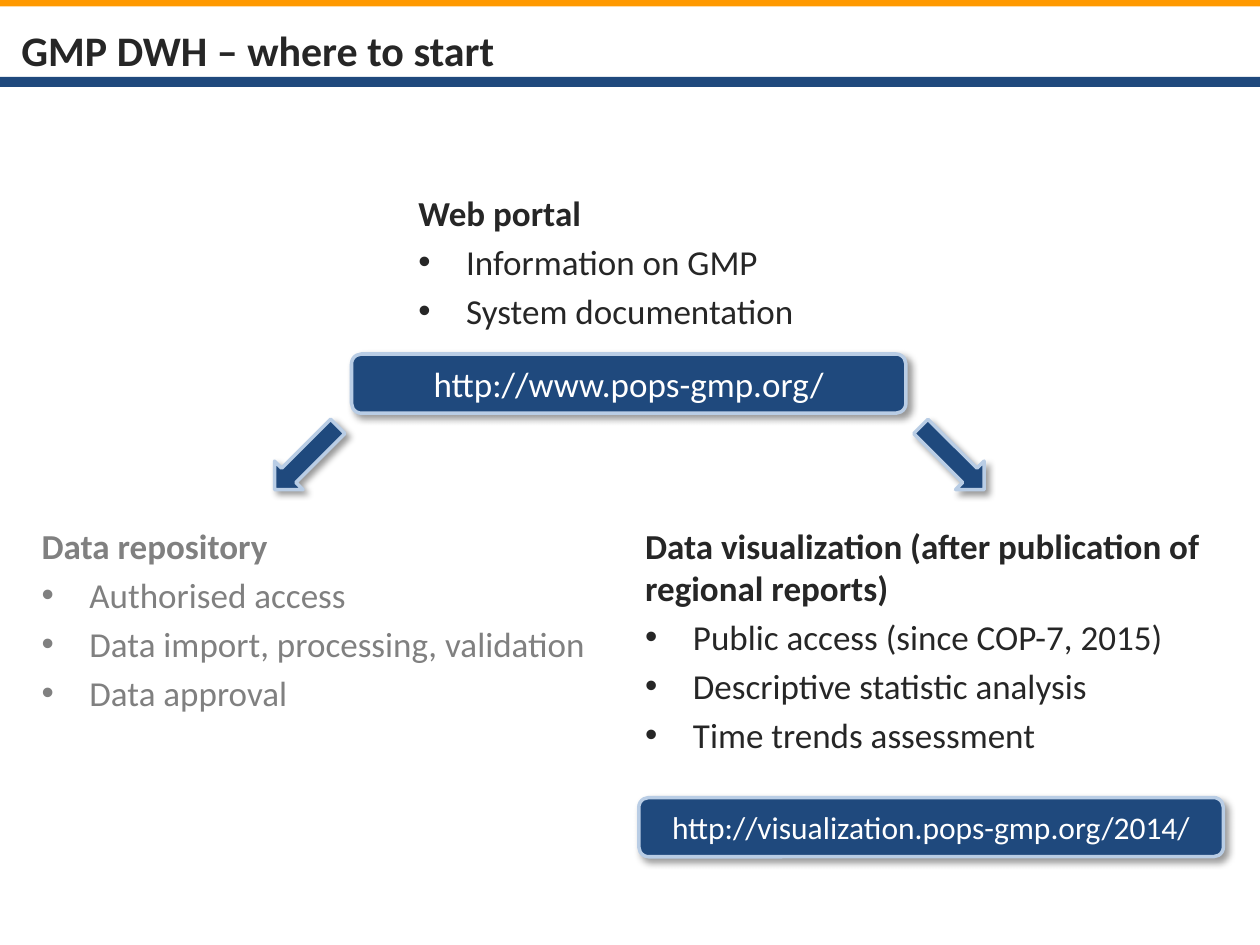
import pptx
import pptx.dml.color
import pptx.enum.shapes
import pptx.enum.text
import pptx.oxml
import pptx.oxml.ns
import pptx.util
from pptx.util import Inches

RGBColor = pptx.dml.color.RGBColor
ShapeType = pptx.enum.shapes.MSO_SHAPE
Align = pptx.enum.text.PP_ALIGN
Anchor = pptx.enum.text.MSO_ANCHOR

NAVY = RGBColor(0x1F, 0x49, 0x7D)
ORANGE = RGBColor(0xFF, 0x99, 0x00)
PALE_BLUE = RGBColor(0xB9, 0xCD, 0xE5)
DARK = RGBColor(0x26, 0x26, 0x26)
GREY = RGBColor(0x80, 0x80, 0x80)
WHITE = RGBColor(0xFF, 0xFF, 0xFF)
FONT = "Calibri"
SHADOW = (
    f'<a:effectLst {pptx.oxml.ns.nsdecls("a")}>'
    '<a:outerShdw blurRad="50800" dist="38100" dir="2700000" algn="tl" rotWithShape="0">'
    '<a:srgbClr val="000000"><a:alpha val="40000"/></a:srgbClr>'
    '</a:outerShdw></a:effectLst>'
)


def prepare_frame(text_frame, anchor):
    """Set wrapping, anchor and narrow margins of a text frame."""
    text_frame.word_wrap = True
    text_frame.auto_size = pptx.enum.text.MSO_AUTO_SIZE.NONE
    text_frame.vertical_anchor = anchor
    text_frame.margin_left = text_frame.margin_right = Inches(0.05)
    text_frame.margin_top = text_frame.margin_bottom = Inches(0.05)


def add_text(paragraph, text, size, color, bold=False):
    """Add one formatted run to a paragraph."""
    run = paragraph.add_run()
    run.text = text
    run.font.name = FONT
    run.font.size = pptx.util.Pt(size)
    run.font.bold = bold
    run.font.color.rgb = color


def add_bullet(paragraph):
    """Give a paragraph a hanging round bullet."""
    properties = paragraph._p.get_or_add_pPr()
    properties.set("marL", str(Inches(0.38)))
    properties.set("indent", str(-Inches(0.38)))
    namespace = pptx.oxml.ns.nsdecls("a")
    properties.append(pptx.oxml.parse_xml(f'<a:buFont {namespace} typeface="Arial"/>'))
    properties.append(pptx.oxml.parse_xml(f'<a:buChar {namespace} char="•"/>'))


def add_header(slide, left, top, width, title):
    """Place the title between an orange and a navy band."""
    for offset, height, color in ((0, 0.05, ORANGE), (0.61, 0.08, NAVY)):
        band = slide.shapes.add_shape(
            ShapeType.RECTANGLE, Inches(left), Inches(top + offset), Inches(width), Inches(height))
        band.shadow.inherit = False
        band.fill.solid()
        band.fill.fore_color.rgb = color
        band.line.fill.background()
    placeholder = slide.shapes.title
    placeholder.left, placeholder.top = Inches(left + 0.12), Inches(top + 0.09)
    placeholder.width, placeholder.height = Inches(6.45), Inches(0.61)
    prepare_frame(placeholder.text_frame, Anchor.MIDDLE)
    paragraph = placeholder.text_frame.paragraphs[0]
    paragraph.alignment = Align.LEFT
    add_text(paragraph, title, 24, DARK, True)


def add_topic(slide, left, top, width, height, heading, items, color):
    """Place a bold heading with a bulleted list under it."""
    box = slide.shapes.add_textbox(Inches(left), Inches(top), Inches(width), Inches(height))
    prepare_frame(box.text_frame, Anchor.TOP)
    add_text(box.text_frame.paragraphs[0], heading, 20, color, True)
    for item in items:
        paragraph = box.text_frame.add_paragraph()
        paragraph.space_before = pptx.util.Pt(4)
        add_bullet(paragraph)
        add_text(paragraph, item, 20, color)


def add_raised_shape(slide, shape_type, left, top, width, height):
    """Place a navy shape with a pale outline and a soft shadow."""
    shape = slide.shapes.add_shape(
        shape_type, Inches(left), Inches(top), Inches(width), Inches(height))
    shape.fill.solid()
    shape.fill.fore_color.rgb = NAVY
    shape.line.color.rgb = PALE_BLUE
    shape.line.width = pptx.util.Pt(2)
    shape._element.spPr.append(pptx.oxml.parse_xml(SHADOW))
    return shape


def add_address(slide, left, top, width, height, address, size):
    """Place a web address on a rounded button."""
    button = add_raised_shape(slide, ShapeType.ROUNDED_RECTANGLE, left, top, width, height)
    prepare_frame(button.text_frame, Anchor.MIDDLE)
    paragraph = button.text_frame.paragraphs[0]
    paragraph.alignment = Align.CENTER
    add_text(paragraph, address, size, WHITE)


def add_arrow(slide, left, top, width, height, rotation):
    """Place a block arrow that points down before it is rotated."""
    arrow = add_raised_shape(slide, ShapeType.DOWN_ARROW, left, top, width, height)
    arrow.rotation = rotation


def main():
    """Build and save the slide."""
    presentation = pptx.Presentation()
    presentation.slide_width, presentation.slide_height = Inches(10), Inches(7.5)
    slide = presentation.slides.add_slide(presentation.slide_layouts[5])
    add_header(slide, 0, 0, 10, "GMP DWH – where to start")
    add_topic(slide, 0.28, 4.11, 4.64, 2.39, "Data repository",
              ["Authorised access", "Data import, processing, validation", "Data approval"], GREY)
    add_topic(slide, 5.07, 4.11, 4.64, 2.24,
              "Data visualization (after publication of regional reports)",
              ["Public access (since COP-7, 2015)", "Descriptive statistic analysis",
               "Time trends assessment"], DARK)
    add_address(slide, 5.07, 6.33, 4.64, 0.47, "http://visualization.pops-gmp.org/2014/", 18)
    add_topic(slide, 3.27, 1.47, 3.46, 1.3, "Web portal",
              ["Information on GMP", "System documentation"], DARK)
    add_address(slide, 2.79, 2.81, 4.4, 0.47, "http://www.pops-gmp.org/", 20)
    for left, rotation in ((2.27, 45), (7.4, 315)):
        add_arrow(slide, left, 3.28, 0.32, 0.71, rotation)
    presentation.save("out.pptx")


if __name__ == "__main__":
    main()
